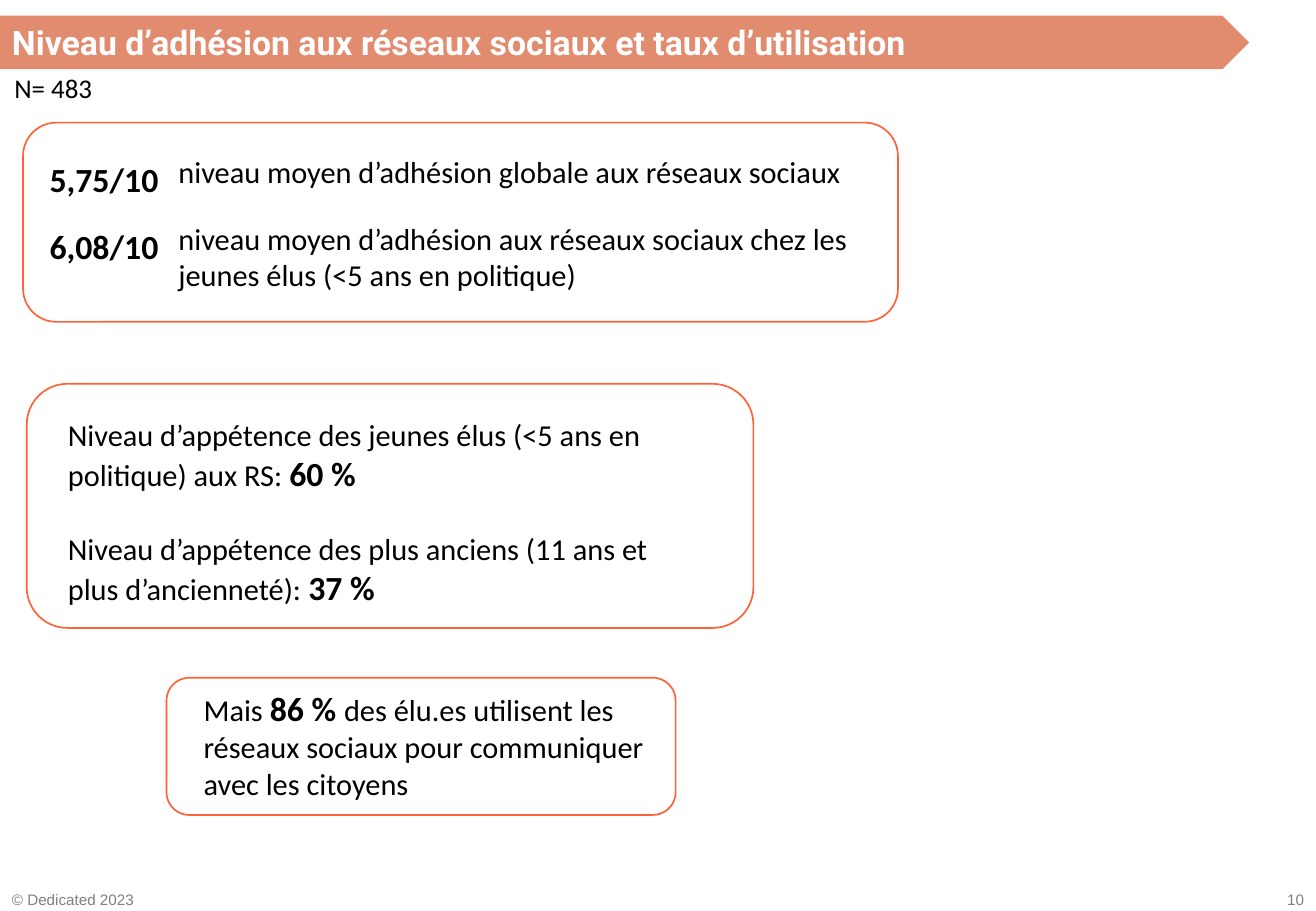
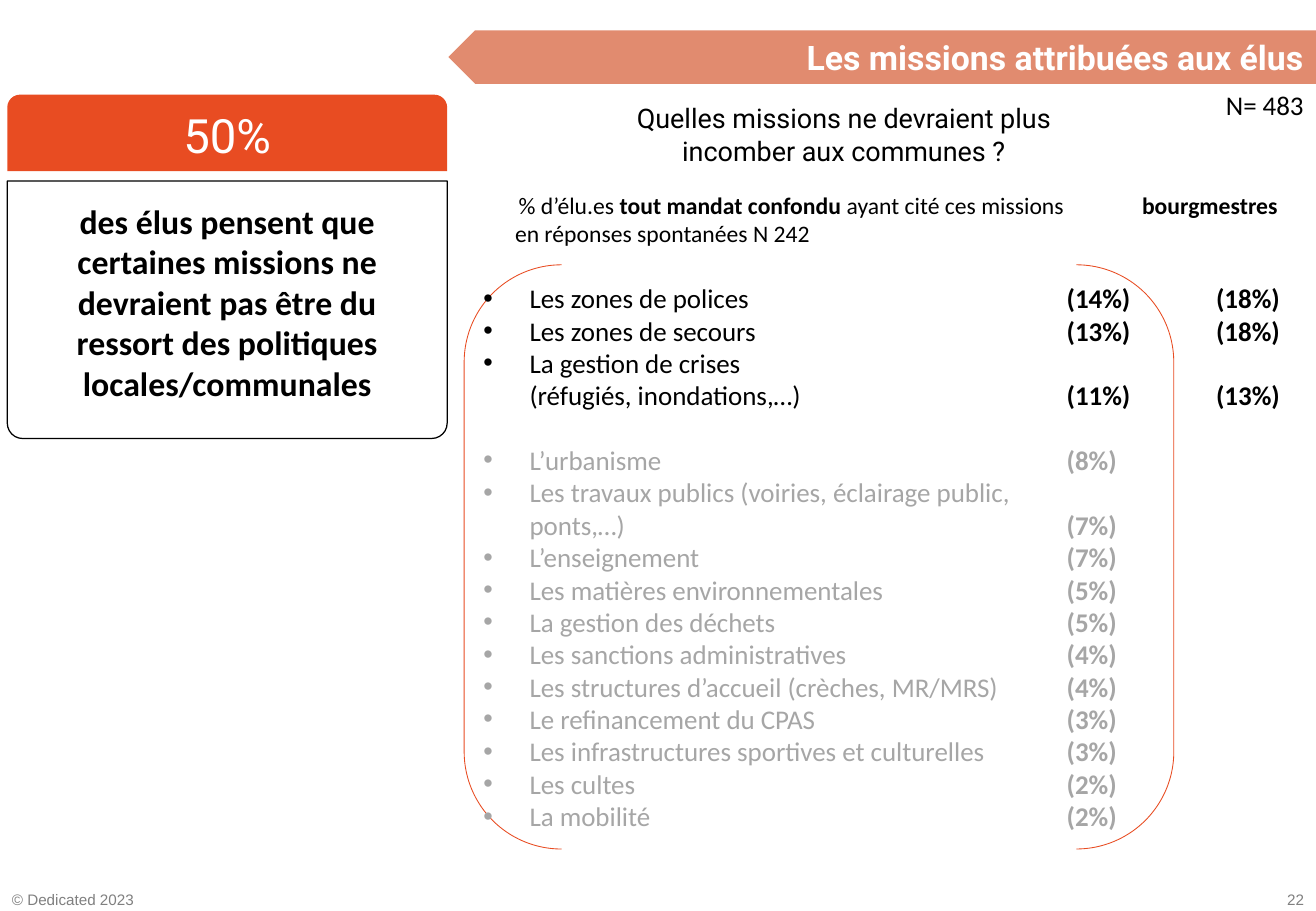
from lxml import etree
from pptx import Presentation
from pptx.dml.color import RGBColor
from pptx.enum import shapes, text
from pptx.oxml import ns
from pptx.util import Inches, Pt

COLORS = {
    "black": "000000", "white": "FFFFFF", "grey": "A6A6A6", "footer": "808080",
    "band": "E18B6F", "accent": "E84C22", "card": "FF6238",
}
WIDTH, HEIGHT = 10.83, 7.5
SAMPLE = "N= 483"
LINE = 19.2
HANG = 0.38
LEFT, CENTER, RIGHT = text.PP_ALIGN.LEFT, text.PP_ALIGN.CENTER, text.PP_ALIGN.RIGHT
TOP, MIDDLE = text.MSO_ANCHOR.TOP, text.MSO_ANCHOR.MIDDLE
PRESET = shapes.MSO_SHAPE

MISSIONS = [
    ("Les zones de polices", "(14%)", "(18%)"),
    ("Les zones de secours", "(13%)", "(18%)"),
    ("La gestion de crises", "", ""),
    ("(réfugiés, inondations,…)", "(11%)", "(13%)"),
    ("", "", ""),
    ("L’urbanisme", "(8%)", ""),
    ("Les travaux publics (voiries, éclairage public,", "", ""),
    ("ponts,…)", "(7%)", ""),
    ("L’enseignement", "(7%)", ""),
    ("Les matières environnementales", "(5%)", ""),
    ("La gestion des déchets", "(5%)", ""),
    ("Les sanctions administratives", "(4%)", ""),
    ("Les structures d’accueil (crèches, MR/MRS)", "(4%)", ""),
    ("Le refinancement du CPAS", "(3%)", ""),
    ("Les infrastructures sportives et culturelles", "(3%)", ""),
    ("Les cultes", "(2%)", ""),
    ("La mobilité", "(2%)", ""),
]
CONTINUATIONS = ("(réfugiés, inondations,…)", "ponts,…)")
MAIN_MISSIONS = 4


def rgb(name):
    """Return the palette colour of that name."""
    return RGBColor.from_string(COLORS[name])


def write(paragraph, pieces, color="black", font="Calibri", align=LEFT):
    """Fill a paragraph with (text, size, bold) pieces."""
    paragraph.alignment = align
    for words, size, bold in pieces:
        run = paragraph.add_run()
        run.text = words
        run.font.name = font
        run.font.size = Pt(size)
        run.font.bold = bold
        run.font.color.rgb = rgb(color)


def indent(paragraph, margin, first, bullet=False):
    """Set the left margin and first-line indent, with an optional bullet."""
    properties = paragraph._p.get_or_add_pPr()
    properties.set("marL", str(Inches(margin)))
    properties.set("indent", str(Inches(first)))
    if bullet:
        etree.SubElement(properties, ns.qn("a:buFont")).set("typeface", "Arial")
        etree.SubElement(properties, ns.qn("a:buChar")).set("char", "•")


def set_frame(frame, margins=(0.1, 0.05, 0.1, 0.05), anchor=TOP):
    """Set wrapping, margins and anchor of a text frame."""
    frame.word_wrap = True
    frame.vertical_anchor = anchor
    left, top, right, bottom = margins
    frame.margin_left, frame.margin_right = Inches(left), Inches(right)
    frame.margin_top, frame.margin_bottom = Inches(top), Inches(bottom)


def add_text(slide, box, pieces, **style):
    """Add a wrapped text box of one paragraph and return that paragraph."""
    frame = slide.shapes.add_textbox(*map(Inches, box)).text_frame
    set_frame(frame)
    write(frame.paragraphs[0], pieces, **style)
    return frame.paragraphs[0]


def add_panel(slide, preset, box, fill=None, line=None, weight=1):
    """Add a preset shape with the given fill and outline."""
    panel = slide.shapes.add_shape(preset, *map(Inches, box))
    panel.shadow.inherit = False
    if fill:
        panel.fill.solid()
        panel.fill.fore_color.rgb = rgb(fill)
    else:
        panel.fill.background()
    if line:
        panel.line.color.rgb = rgb(line)
        panel.line.width = Pt(weight)
    else:
        panel.line.fill.background()
    return panel


def add_card(slide, box, paragraphs=(), margins=(0.1, 0.05, 0.1, 0.05)):
    """Add a rounded outline holding spaced paragraphs."""
    frame = add_panel(slide, PRESET.ROUNDED_RECTANGLE, box, line="card").text_frame
    set_frame(frame, margins)
    for index, pieces in enumerate(paragraphs):
        paragraph = frame.add_paragraph() if index else frame.paragraphs[0]
        if index:
            paragraph.space_before = Pt(22)
        write(paragraph, pieces)


def add_title(slide, box, title, flipped=False):
    """Add the arrow-shaped title band, pointing left when flipped."""
    band = add_panel(slide, PRESET.PENTAGON, box, fill="band")
    if flipped:
        band._element.spPr.find(ns.qn("a:xfrm")).set("flipH", "1")
    set_frame(band.text_frame, anchor=MIDDLE)
    write(band.text_frame.paragraphs[0], [(title, 20, True)], "white", "Roboto",
          RIGHT if flipped else LEFT)


def add_footer(slide, number):
    """Add the copyright line and the page number."""
    style = {"color": "footer", "font": "Arial"}
    add_text(slide, (0, 7.28, 1.5, 0.25), [("© Dedicated 2023", 9, False)], **style)
    add_text(slide, (WIDTH - 0.67, 7.28, 0.67, 0.25), [(number, 9, False)],
             align=RIGHT, **style)


def add_scores(slide, box):
    """Add the card of average scores, one row per score."""
    left, top, width, _ = box
    add_card(slide, box)
    rows = [
        (0.2, 0.4, "5,75/10", "niveau moyen d’adhésion globale aux réseaux sociaux"),
        (0.75, 0.71, "6,08/10", "niveau moyen d’adhésion aux réseaux sociaux chez les "
                                "jeunes élus (<5 ans en politique)"),
    ]
    for offset, height, score, label in rows:
        add_text(slide, (left + 0.12, top + offset + 0.05, 1.15, 0.44), [(score, 20, True)])
        add_text(slide, (left + 1.18, top + offset, width - 1.1, height), [(label, 18, False)])


def add_statement(slide, box):
    """Add the headline percentage above its explanation."""
    left, top, width, height = box
    header = add_panel(slide, PRESET.ROUND_2_SAME_RECTANGLE, (left, top, width, 0.63),
                       fill="accent")
    set_frame(header.text_frame, anchor=MIDDLE)
    write(header.text_frame.paragraphs[0], [("50%", 28, False)], "white", "Roboto", CENTER)
    body = add_panel(slide, PRESET.ROUND_2_SAME_RECTANGLE,
                     (left, top + 0.71, width, height - 0.71), line="black", weight=0.75)
    body.adjustments[0], body.adjustments[1] = 0, 0.06
    set_frame(body.text_frame, (0.22, 0.16, 0.22, 0.1))
    write(body.text_frame.paragraphs[0],
          [("des élus pensent que certaines missions ne devraient pas être du ressort "
            "des politiques locales/communales", 20, True)], align=CENTER)


def add_column(slide, box, column):
    """Add one column of the mission list, keeping rows level across columns."""
    frame = slide.shapes.add_textbox(*map(Inches, box)).text_frame
    set_frame(frame)
    skipped, paragraph = 0, None
    for row, mission in enumerate(MISSIONS):
        words = mission[column]
        if not words:
            skipped += 1
            continue
        paragraph = frame.add_paragraph() if paragraph else frame.paragraphs[0]
        if column == 0:
            bulleted = words not in CONTINUATIONS
            indent(paragraph, HANG, -HANG if bulleted else 0, bulleted)
        if skipped:
            paragraph.space_before = Pt(skipped * LINE)
        write(paragraph, [(words, 16, column > 0)],
              "black" if row < MAIN_MISSIONS else "grey")
        skipped = 0


def add_missions(slide, box):
    """Add the bracketed mission list with its two columns of percentages."""
    left, top, _, height = box
    add_panel(slide, PRESET.DOUBLE_BRACKET, box, line="accent", weight=0.5)
    for column, (offset, width) in enumerate([(0.06, 4.8), (4.86, 0.8), (6.09, 0.8)]):
        add_column(slide, (left + offset, top + 0.09, width, height), column)
    caption = add_text(slide, (left + 0.32, top - 0.66, 4.76, 0.57), [
        ("% d’élu.es ", 14, False), ("tout mandat confondu ", 14, True),
        ("ayant cité ces missions en réponses spontanées N 242", 14, False)])
    indent(caption, 0, 0.03)
    add_text(slide, (left + 5.48, top - 0.66, 1.47, 0.34), [("bourgmestres", 14, True)])


def build_networks(slide):
    """Build the slide on social network adoption."""
    add_footer(slide, "10")
    add_title(slide, (0, 0.13, 10.28, 0.44),
              "Niveau d’adhésion aux réseaux sociaux et taux d’utilisation")
    add_text(slide, (0.02, 0.54, 1.07, 0.37), [(SAMPLE, 16, False)])
    add_scores(slide, (0.19, 1.01, 7.2, 1.64))
    add_card(slide, (0.22, 3.16, 5.98, 2.01), [
        [("Niveau d’appétence des jeunes élus (<5 ans en politique) aux RS: ", 18, False),
         ("60 %", 20, True)],
        [("Niveau d’appétence des plus anciens (11 ans et plus d’ancienneté): ", 18, False),
         ("37 %", 20, True)],
    ], (0.24, 0.17, 0.56, 0))
    add_card(slide, (1.37, 5.58, 4.19, 1.13), [
        [("Mais ", 18, False), ("86 % ", 20, True),
         ("des élu.es utilisent les réseaux sociaux pour communiquer avec les citoyens",
          18, False)],
    ], (0.25, 0.03, 0.08, 0))


def build_missions(slide):
    """Build the slide on the missions given to elected officials."""
    add_footer(slide, "22")
    add_title(slide, (3.69, 0.25, WIDTH - 3.69, 0.44), "Les missions attribuées aux élus", True)
    add_text(slide, (9.99, 0.68, 0.91, 0.37), [(SAMPLE, 16, False)])
    add_statement(slide, (0.06, 0.78, 3.62, 2.83))
    add_text(slide, (4.83, 0.79, 4.23, 0.64),
             [("Quelles missions ne devraient plus incomber aux communes ?", 16, False)],
             font="Roboto", align=CENTER)
    add_missions(slide, (3.82, 2.18, 5.84, 4.81))


def main():
    """Build and save the presentation."""
    deck = Presentation()
    deck.slide_width, deck.slide_height = Inches(WIDTH), Inches(HEIGHT)
    for build in (build_networks, build_missions):
        build(deck.slides.add_slide(deck.slide_layouts[6]))
    deck.save("out.pptx")


if __name__ == "__main__":
    main()
